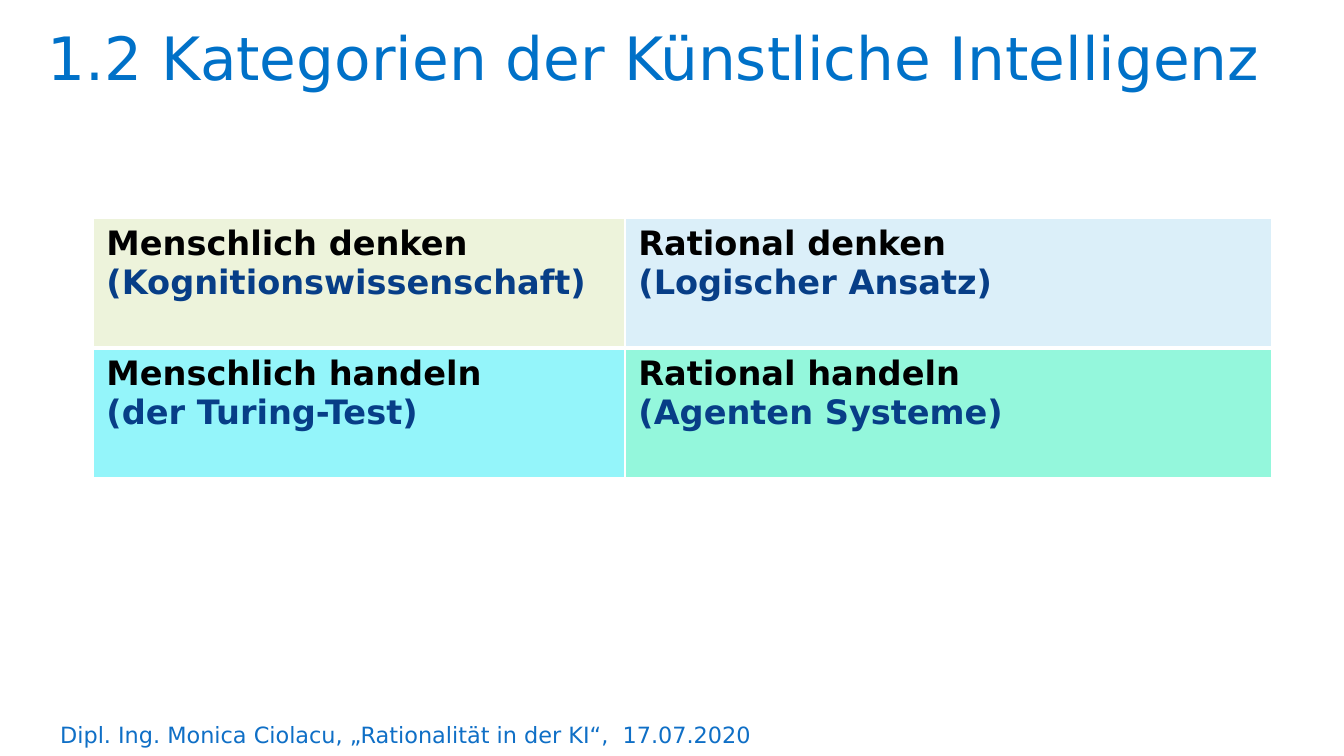
"""Build a slide with the four categories of artificial intelligence."""
import pptx
import pptx.dml.color
import pptx.enum.text
import pptx.oxml
import pptx.oxml.ns
import pptx.util

PX = 6804
WHITE = pptx.dml.color.RGBColor(0xFF, 0xFF, 0xFF)
BLACK = pptx.dml.color.RGBColor(0x00, 0x00, 0x00)
TITLE_BLUE = pptx.dml.color.RGBColor(0x00, 0x71, 0xC8)
FOOTER_BLUE = pptx.dml.color.RGBColor(0x0F, 0x6F, 0xC6)
NAVY = pptx.dml.color.RGBColor(0x07, 0x3E, 0x87)
CREAM = pptx.dml.color.RGBColor(0xED, 0xF3, 0xDB)
PALE_BLUE = pptx.dml.color.RGBColor(0xDB, 0xEF, 0xF9)
CYAN = pptx.dml.color.RGBColor(0x94, 0xF5, 0xFA)
MINT = pptx.dml.color.RGBColor(0x94, 0xF7, 0xDC)

CATEGORIES = [
    [("Menschlich denken", "(Kognitionswissenschaft)", CREAM),
     ("Rational denken", "(Logischer Ansatz)", PALE_BLUE)],
    [("Menschlich handeln", "(der Turing-Test)", CYAN),
     ("Rational handeln", "(Agenten Systeme)", MINT)],
]


class CategorySlide:
    """Holds the style and the current slide."""

    font_name = "DejaVu Sans"

    def __init__(self, deck):
        self.slide = deck.slides.add_slide(deck.slide_layouts[6])

    def styled_run(self, paragraph, wording, size, color, bold=False):
        """Add one styled run to a paragraph."""
        run = paragraph.add_run()
        run.text = wording
        style = {"name": self.font_name, "size": pptx.util.Pt(size), "bold": bold}
        for attribute, value in style.items():
            setattr(run.font, attribute, value)
        run.font.color.rgb = color

    def text(self, box, wording, size, color, frame_format, paragraph_format):
        """Add a text box with a single line."""
        frame = self.slide.shapes.add_textbox(*(n * PX for n in box)).text_frame
        paragraph = frame.paragraphs[0]
        for target, formats in ((frame, frame_format), (paragraph, paragraph_format)):
            for attribute, value in formats.items():
                setattr(target, attribute, value)
        self.styled_run(paragraph, wording, size, color)

    def border(self, cell, widths):
        """Draw the cell edges, each with its width in points."""
        properties = cell._tc.get_or_add_tcPr()
        for side, width in widths.items():
            properties.append(pptx.oxml.parse_xml(
                f'<a:ln{side} {pptx.oxml.ns.nsdecls("a")} w="{pptx.util.Pt(width)}">'
                f'<a:solidFill><a:srgbClr val="{WHITE}"/></a:solidFill></a:ln{side}>'))

    def table(self, left, top, column_widths, row_height, categories):
        """Add the grid of categories."""
        rows = len(categories)
        size = (sum(column_widths), rows * row_height)
        grid = self.slide.shapes.add_table(
            rows, len(column_widths), *(n * PX for n in (left, top, *size))).table
        for attribute, value in {"first_row": False, "horz_banding": False}.items():
            setattr(grid, attribute, value)
        for column, width in zip(grid.columns, column_widths):
            column.width = width * PX
        for r, categories_in_row in enumerate(categories):
            grid.rows[r].height = row_height * PX
            for c, (category, approach, fill) in enumerate(categories_in_row):
                cell = grid.cell(r, c)
                self.border(cell, {"L": 1, "R": 1, "T": 3 if r else 1,
                                   "B": 3 if r < rows - 1 else 1})
                cell.fill.solid()
                cell.fill.fore_color.rgb = fill
                self.styled_run(cell.text_frame.paragraphs[0], category, 18, BLACK, True)
                self.styled_run(cell.text_frame.add_paragraph(), approach, 18, NAVY, True)


def main():
    """Build and save the deck."""
    deck = pptx.Presentation()
    deck.slide_width, deck.slide_height = 1344 * PX, 756 * PX
    page = CategorySlide(deck)
    page.text((47, 715, 827, 40), "Dipl. Ing. Monica Ciolacu, „Rationalität in der KI“,  17.07.2020",
              12, FOOTER_BLUE,
              {"word_wrap": True, "auto_size": pptx.enum.text.MSO_AUTO_SIZE.SHAPE_TO_FIT_TEXT}, {})
    page.text((38, 24, 1269, 93), "1.2 Kategorien der Künstliche Intelligenz", 32, TITLE_BLUE,
              {"word_wrap": True, "margin_left": 10 * PX, "margin_right": 10 * PX,
               "margin_top": 5 * PX, "margin_bottom": 5 * PX},
              {"line_spacing": 0.9, "space_before": pptx.util.Pt(7.5)})
    page.table(93, 218, (532, 647), 130, CATEGORIES)
    deck.save("out.pptx")


if __name__ == "__main__":
    main()
